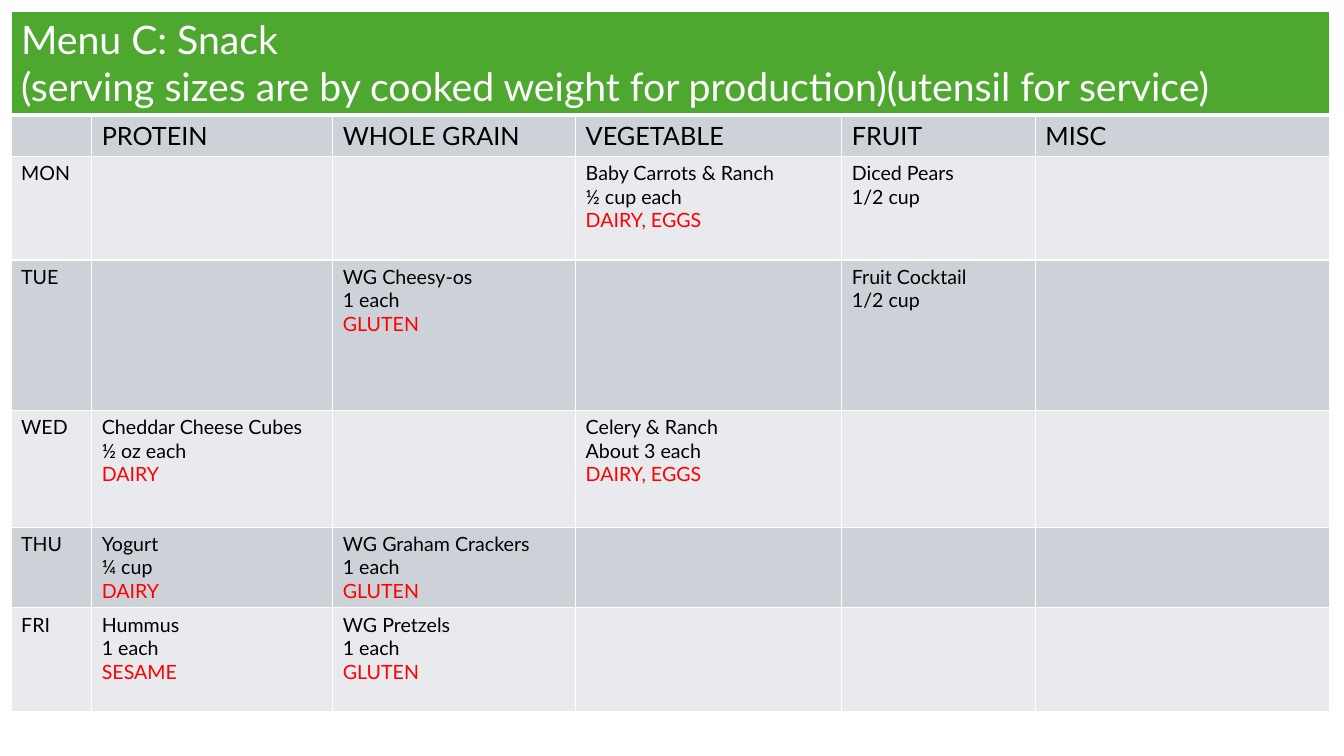
from lxml import etree
from pptx import Presentation
from pptx.dml.color import RGBColor
from pptx.oxml.ns import qn
from pptx.util import Inches, Pt

TITLE = ["Menu C: Snack",
         "(serving sizes are by cooked weight for production)(utensil for service)"]
HEADINGS = ["", "PROTEIN", "WHOLE GRAIN", "VEGETABLE", "FRUIT", "MISC"]
# Day -> food group -> dish, serving and, where needed, allergens
MENU = {
    "MON": {"VEGETABLE": ["Baby Carrots & Ranch", "½ cup each", "DAIRY, EGGS"],
            "FRUIT": ["Diced Pears", "1/2 cup"]},
    "TUE": {"WHOLE GRAIN": ["WG Cheesy-os", "1 each", "GLUTEN"],
            "FRUIT": ["Fruit Cocktail", "1/2 cup"]},
    "WED": {"PROTEIN": ["Cheddar Cheese Cubes", "½ oz each", "DAIRY"],
            "VEGETABLE": ["Celery & Ranch", "About 3 each", "DAIRY, EGGS"]},
    "THU": {"PROTEIN": ["Yogurt", "¼ cup", "DAIRY"],
            "WHOLE GRAIN": ["WG Graham Crackers", "1 each", "GLUTEN"]},
    "FRI": {"PROTEIN": ["Hummus", "1 each", "SESAME"],
            "WHOLE GRAIN": ["WG Pretzels", "1 each", "GLUTEN"]},
}
COLUMN_WIDTHS = [0.8, 2.39, 2.41, 2.64, 1.92, 2.92]
ROW_HEIGHTS = [1.03, 0.4, 1.03, 1.49, 1.16, 0.8, 1.03]
LEFT = TOP = 0.11

FONT = "Lato"
GREEN = RGBColor(0x4E, 0xA7, 0x2E)
DARK_BAND = RGBColor(0xCC, 0xD2, 0xD8)
LIGHT_BAND = RGBColor(0xE8, 0xEA, 0xED)
WHITE = RGBColor(0xFF, 0xFF, 0xFF)
BLACK = RGBColor(0, 0, 0)
RED = RGBColor(0xFF, 0, 0)


def write(cell, lines, size=14, color=BLACK, allergen_color=RED):
    """Write one paragraph per line; a third line names allergens."""
    frame = cell.text_frame
    for index, line in enumerate(lines):
        para = frame.paragraphs[0] if index == 0 else frame.add_paragraph()
        span = para.add_run()
        span.text = line
        span.font.name = FONT
        span.font.size = Pt(size)
        span.font.color.rgb = allergen_color if index == 2 else color


def style(cell, fill, bottom=1):
    """Draw the cell's white borders, then its fill."""
    properties = cell._tc.get_or_add_tcPr()
    for side, width in (("L", 1), ("R", 1), ("T", 1), ("B", bottom)):
        line = etree.SubElement(properties, qn("a:ln" + side), w=str(Pt(width)))
        solid = etree.SubElement(line, qn("a:solidFill"))
        etree.SubElement(solid, qn("a:srgbClr"), val=str(WHITE))
    cell.fill.solid()
    cell.fill.fore_color.rgb = fill


deck = Presentation()
deck.slide_width, deck.slide_height = Inches(13.33), Inches(7.5)
page = deck.slides.add_slide(deck.slide_layouts[6])

# Grid
table = page.shapes.add_table(
    len(ROW_HEIGHTS), len(COLUMN_WIDTHS), Inches(LEFT), Inches(TOP),
    Inches(sum(COLUMN_WIDTHS)), Inches(sum(ROW_HEIGHTS))).table
for column, width in zip(table.columns, COLUMN_WIDTHS):
    column.width = Inches(width)
for row, height in zip(table.rows, ROW_HEIGHTS):
    row.height = Inches(height)

# Title row across all columns
for cell in table.rows[0].cells:
    style(cell, GREEN, bottom=3)
table.cell(0, 0).merge(table.cell(0, len(HEADINGS) - 1))
write(table.cell(0, 0), TITLE, size=28, color=WHITE)

# Bands of alternating colour
for row_index in range(1, len(ROW_HEIGHTS)):
    for cell in table.rows[row_index].cells:
        style(cell, DARK_BAND if row_index % 2 else LIGHT_BAND)

# Food groups
for column_index, heading in enumerate(HEADINGS):
    if heading:
        write(table.cell(1, column_index), [heading], size=18)

# Days and dishes
for row_index, (day, dishes) in enumerate(MENU.items(), start=2):
    write(table.cell(row_index, 0), [day])
    for group, lines in dishes.items():
        write(table.cell(row_index, HEADINGS.index(group)), lines)

deck.save("out.pptx")
